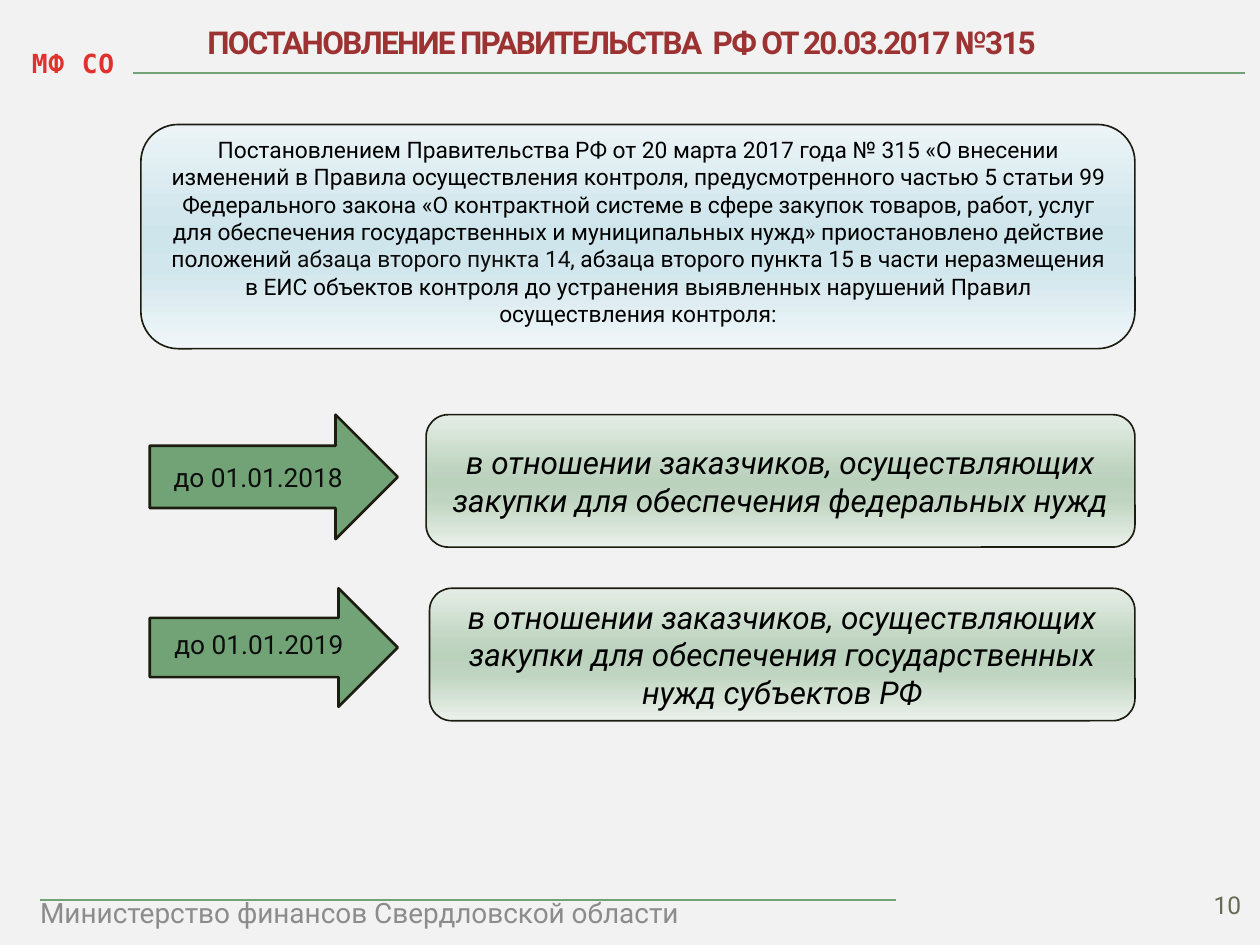
import pptx
import pptx.dml.color
import pptx.enum.shapes
import pptx.enum.text
import pptx.oxml
import pptx.util
from pptx.oxml.ns import nsdecls, qn
from pptx.util import Cm

SHAPE = pptx.enum.shapes.MSO_SHAPE
ALIGN = pptx.enum.text.PP_ALIGN
ANCHOR = pptx.enum.text.MSO_ANCHOR

GREEN, OUTLINE, BLACK, INK = "72A376", "1C1C11", "000000", "0D0D0D"
STOPS = (0, 40, 50, 65, 100)
BLUE_SHADES = ("ECF4F7", "D2E7ED", "CEE5EC", "D2E7ED", "F0F6F9")
GREEN_SHADES = ("E5EDE6", "C0D5C1", "BAD2BC", "C0D5C1", "EBF1EB")


def color(value):
    return pptx.dml.color.RGBColor.from_string(value)


class SlideBuilder:
    font_name = "Roboto"

    def __init__(self, presentation):
        self.slide = presentation.slides.add_slide(presentation.slide_layouts[6])

    def background(self, value):
        fill = self.slide.background.fill
        fill.solid()
        fill.fore_color.rgb = color(value)

    def set_text(self, shape, paragraphs, size, ink=BLACK, align=ALIGN.CENTER,
                 anchor=ANCHOR.TOP, bottom=0.13, tracking=0, paragraph_format=None, **font):
        """Each paragraph is a string or a list of (text, colour) runs."""
        frame = shape.text_frame
        frame_format = {"word_wrap": True, "vertical_anchor": anchor,
                        "margin_bottom": Cm(bottom)}
        for name, value in frame_format.items():
            setattr(frame, name, value)
        font_format = {"name": self.font_name, "size": pptx.util.Pt(size), **font}
        for index, content in enumerate(paragraphs):
            paragraph = frame.add_paragraph() if index else frame.paragraphs[0]
            for name, value in {"alignment": align, **(paragraph_format or {})}.items():
                setattr(paragraph, name, value)
            runs = [(content, ink)] if isinstance(content, str) else content
            for text, run_color in runs:
                run = paragraph.add_run()
                run.text = text
                for name, value in font_format.items():
                    setattr(run.font, name, value)
                run.font.color.rgb = color(run_color)
                if tracking:
                    run.font._element.set("spc", str(tracking))

    def label(self, box, text, size, ink, **options):
        shape = self.slide.shapes.add_textbox(*map(Cm, box))
        self.set_text(shape, [text], size, ink, **options)

    def line(self, left, right, height):
        connector = self.slide.shapes.add_connector(
            pptx.enum.shapes.MSO_CONNECTOR.STRAIGHT,
            Cm(left), Cm(height), Cm(right), Cm(height))
        connector.line.color.rgb = color(GREEN)
        connector.line.width = pptx.util.Pt(0.94)
        connector._element.spPr.append(
            pptx.oxml.parse_xml(f"<a:effectLst {nsdecls('a')}/>"))

    def outlined(self, kind, box, width):
        shape = self.slide.shapes.add_shape(kind, *map(Cm, box))
        shape.shadow.inherit = False
        shape.line.color.rgb = color(OUTLINE)
        shape.line.width = pptx.util.Pt(width)
        return shape

    def card(self, box, shades, paragraphs, size, **options):
        shape = self.outlined(SHAPE.ROUNDED_RECTANGLE, box, 0.94)
        shape.fill.gradient()
        shape.fill.gradient_angle = 270
        stop_list = shape._element.spPr.find(qn("a:gradFill")).find(qn("a:gsLst"))
        stop_list.clear()
        for position, shade in zip(STOPS, shades):
            stop_list.append(pptx.oxml.parse_xml(
                f'<a:gs {nsdecls("a")} pos="{position * 1000}">'
                f'<a:srgbClr val="{shade}"/></a:gs>'))
        self.set_text(shape, paragraphs, size, anchor=ANCHOR.MIDDLE, **options)

    def arrow(self, box, text, **options):
        shape = self.outlined(SHAPE.RIGHT_ARROW, box, 1.5)
        shape.fill.solid()
        shape.fill.fore_color.rgb = color(GREEN)
        self.set_text(shape, [text], 15, INK, anchor=ANCHOR.MIDDLE, **options)


def main():
    presentation = pptx.Presentation()
    presentation.slide_width, presentation.slide_height = Cm(25.4), Cm(19.05)
    builder = SlideBuilder(presentation)
    builder.background("F2F2F2")

    # Header and footer
    builder.label((-0.15, 0.74, 3.25, 0.99), "МФ СО", 15, "E0322D", bold=True,
                  name="DejaVu Sans Mono", tracking=50,
                  paragraph_format={"line_spacing": 1.15,
                                    "space_after": pptx.util.Pt(10.4)})
    builder.line(2.69, 25.1, 1.47)
    builder.label((0.56, 17.93, 18.24, 0.94), "Министерство финансов Свердловской области",
                  16, "8C8C8C", align=ALIGN.LEFT)
    builder.line(0.81, 18.06, 18.14)
    builder.label((23.72, 17.65, 1.55, 1.02), "10", 14, "676A55",
                  align=ALIGN.RIGHT, anchor=ANCHOR.BOTTOM)
    builder.label((3.35, 0.33, 18.36, 1.02),
                  "ПОСТАНОВЛЕНИЕ ПРАВИТЕЛЬСТВА  РФ ОТ 20.03.2017 №315",
                  18, "9D3232", bold=True, tracking=-100)

    # Resolution text
    builder.card((2.84, 2.51, 20.04, 4.52), BLUE_SHADES, [
        "Постановлением Правительства РФ от 20 марта 2017 года № 315 «О внесении",
        [("изменений в Правила осуществления контроля, предусмотренного частью 5 статьи 99 "
          "Федерального закона «О контрактной системе в сфере закупок товаров, работ, услуг "
          "для обеспечения государственных и муниципальных нужд» приостановлено действие "
          "положений ", BLACK),
         ("абзаца второго пункта 14", INK),
         (", абзаца второго пункта 15 в части неразмещения", BLACK)],
        "в ЕИС объектов контроля до устранения выявленных нарушений Правил",
        "осуществления контроля:",
    ], 13, bottom=0.34)

    # Deadlines and the customers they apply to
    deadlines = [
        (8.36, 2.51, 0.13, "до 01.01.2018", 8.59,
         "в отношении заказчиков, осуществляющих закупки для обеспечения федеральных нужд"),
        (11.86, 2.39, 0.25, "до 01.01.2019", 8.66,
         "в отношении заказчиков, осуществляющих закупки для обеспечения "
         "государственных нужд субъектов РФ"),
    ]
    card_right = 22.88
    for top, arrow_height, bottom, date, card_left, customers in deadlines:
        builder.arrow((3.02, top, 5, arrow_height), date, bottom=bottom)
        builder.card((card_left, top, card_right - card_left, 2.67), GREEN_SHADES,
                     [customers], 18, italic=True)

    presentation.save("out.pptx")


if __name__ == "__main__":
    main()
